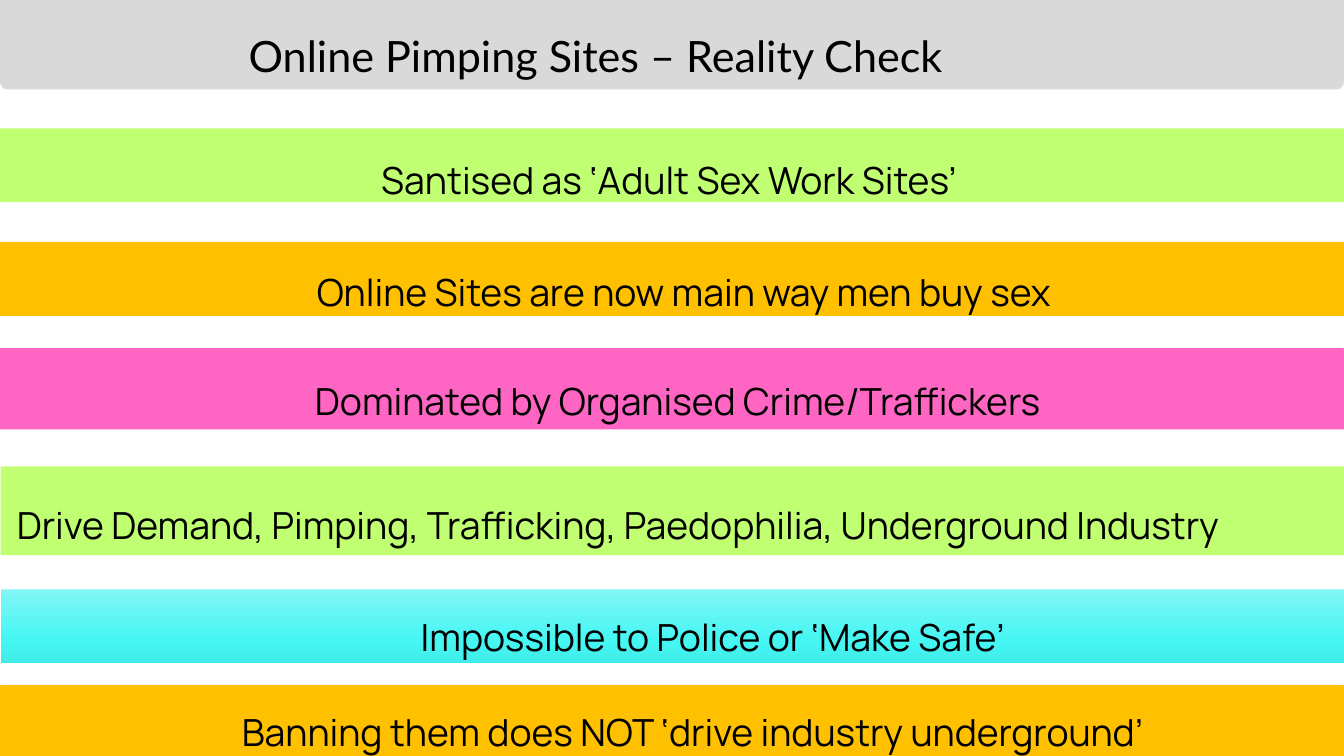
from copy import deepcopy

from pptx import Presentation
from pptx.dml.color import RGBColor
from pptx.enum.shapes import MSO_SHAPE
from pptx.enum.text import MSO_ANCHOR, MSO_AUTO_SIZE, PP_ALIGN
from pptx.oxml.ns import qn
from pptx.util import Pt

BLACK = RGBColor(0x00, 0x00, 0x00)
GREY = RGBColor(0xD9, 0xD9, 0xD9)
GREEN = RGBColor(0xC1, 0xFF, 0x72)
AMBER = RGBColor(0xFF, 0xC0, 0x00)
PINK = RGBColor(0xFF, 0x66, 0xC4)
AQUA_STOPS = [
    (0, RGBColor(0x82, 0xF6, 0xF6)),
    (0.69, RGBColor(0x45, 0xF6, 0xF3)),
    (1, RGBColor(0x41, 0xED, 0xE9)),
]

HEADING = {"name": "Lato", "size": Pt(46.2), "bold": False}
STATEMENT = {"name": "Manrope", "size": Pt(40), "bold": False}
FRAME = {
    "margin_left": 0, "margin_top": 0, "margin_right": 0, "margin_bottom": 0,
    "word_wrap": True, "auto_size": MSO_AUTO_SIZE.NONE,
    "vertical_anchor": MSO_ANCHOR.TOP,
}
LEFT, CENTER = PP_ALIGN.LEFT, PP_ALIGN.CENTER

# statement, bar (left, top, width, height), text (left, top, width), align, fill
BANDS = [
    ("Santised as ‘Adult Sex Work Sites’",
     (0, 137.5, 1440, 79.2), (146.9, 137.5, 1139.8), CENTER, GREEN),
    ("Online Sites are now main way men buy sex",
     (-2.9, 259.2, 1447.2, 79.2), (162.7, 257.8, 1139.8), CENTER, AMBER),
    ("Dominated by Organised Crime/Traffickers",
     (-2.9, 373, 1442.9, 87.1), (146.9, 374.4, 1158.5), CENTER, PINK),
    ("Drive Demand, Pimping, Trafficking, Paedophilia, Underground Industry",
     (0.7, 499.7, 1442.9, 95), (18, 507.6, 1416.2), LEFT, GREEN),
    ("Impossible to Police or ‘Make Safe’",
     (0.7, 631.4, 1442.9, 79.2), (326.2, 627.1, 874.8), CENTER, AQUA_STOPS),
    ("Banning them does NOT ‘drive industry underground’",
     (0, 733.7, 1440, 79.2), (197.3, 729.4, 1089.4), CENTER, AMBER),
]


def apply(target, values):
    for name, value in values.items():
        setattr(target, name, value)


def place(shape, left, top, width, height):
    apply(shape, {"left": Pt(left), "top": Pt(top),
                  "width": Pt(width), "height": Pt(height)})


def fill_gradient(bar, colours):
    """Fill from top to bottom with any number of (position, colour) stops."""
    bar.fill.gradient()
    bar.fill.gradient_angle = 270
    stop_list = bar.element.find(".//" + qn("a:gsLst"))
    while len(stop_list) < len(colours):
        stop_list.append(deepcopy(stop_list[0]))
    for stop, (position, colour) in zip(bar.fill.gradient_stops, colours):
        stop.position = position
        stop.color.rgb = colour


def add_bar(slide, box, fill, radius):
    bar = slide.shapes.add_shape(MSO_SHAPE.ROUNDED_RECTANGLE,
                                 *(Pt(length) for length in box))
    bar.adjustments[0] = radius / box[3]
    bar.shadow.inherit = False
    bar.line.fill.background()
    if isinstance(fill, list):
        fill_gradient(bar, fill)
    else:
        bar.fill.solid()
        bar.fill.fore_color.rgb = fill
    return bar


def write(shape, text, font, align, line_spacing):
    frame = shape.text_frame
    apply(frame, FRAME)
    line = frame.paragraphs[0]
    apply(line, {"alignment": align, "line_spacing": Pt(line_spacing)})
    run = line.add_run()
    run.text = text
    apply(run.font, font)
    run.font.color.rgb = BLACK


def add_heading(slide):
    heading = slide.shapes.title
    header = add_bar(slide, (0, -7.2, 1440, 103), GREY, 8)
    heading.element.addprevious(header.element)  # header lies behind the title
    place(heading, 266.4, -9.4, 1168.6, 88.6)
    write(heading, "Online Pimping Sites – Reality Check", HEADING, LEFT, 96.5)


def add_band(slide, statement, bar_box, text_box, align, fill):
    add_bar(slide, bar_box, fill, 1.2)
    label = slide.shapes.add_textbox(0, 0, 0, 0)
    place(label, *text_box, 71.3)
    write(label, statement, STATEMENT, align, 78.5)


def main():
    deck = Presentation()
    apply(deck, {"slide_width": Pt(1440), "slide_height": Pt(810)})
    slide = deck.slides.add_slide(deck.slide_layouts[5])  # title only

    # Header
    add_heading(slide)

    # Statements
    for band in BANDS:
        add_band(slide, *band)

    deck.save("out.pptx")


if __name__ == "__main__":
    main()
